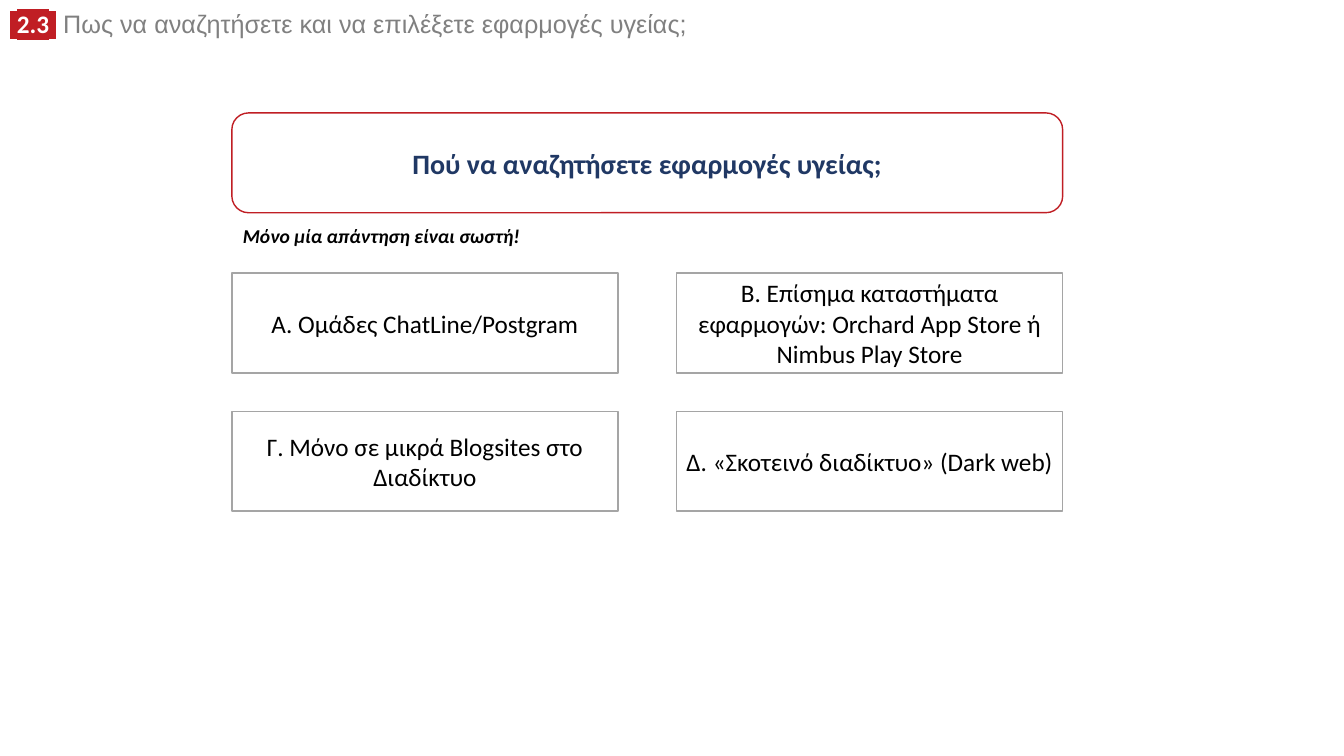
from lxml.etree import SubElement
from pptx import Presentation
from pptx.dml.color import RGBColor
from pptx.enum.shapes import MSO_SHAPE
from pptx.enum.text import MSO_ANCHOR, MSO_AUTO_SIZE, PP_ALIGN
from pptx.oxml.ns import qn
from pptx.util import Inches, Pt

WHITE = RGBColor(0xFF, 0xFF, 0xFF)
BLACK = RGBColor(0x00, 0x00, 0x00)
RED = RGBColor(0xC0, 0x1E, 0x24)
NAVY = RGBColor(0x20, 0x38, 0x64)
GRAY = RGBColor(0x80, 0x80, 0x80)
BORDER = RGBColor(0xA5, 0xA5, 0xA5)

LEFT, BOX_HEIGHT = 2.3, 0.99
ANSWER_WIDTH, ANSWER_TOP = 3.83, 2.71
COLUMN_STEP, ROW_STEP = 4.41, 1.37
ANSWERS = [
    "A. Ομάδες ChatLine/Postgram",
    "B. Επίσημα καταστήματα εφαρμογών: Orchard App Store ή Nimbus Play Store",
    "Γ. Μόνο σε μικρά Blogsites στο Διαδίκτυο",
    "Δ. «Σκοτεινό διαδίκτυο» (Dark web)",
]


def add_text(paragraph, text, size=18, font="Calibri", color=BLACK,
             bold=False, italic=False, highlight=None):
    """Append a formatted run to a paragraph."""
    run = paragraph.add_run()
    run.text = text
    run.font.size = Pt(size)
    run.font.bold = bold
    run.font.italic = italic
    run.font.color.rgb = color
    run.font.name = font
    if highlight is not None:
        properties = run.font._element
        marker = SubElement(properties, qn("a:highlight"))
        SubElement(marker, qn("a:srgbClr"), val=str(highlight))
        properties.find(qn("a:solidFill")).addnext(marker)


def add_label(slide, left, top, width, height, wrap=True):
    """Add a text box and return its first paragraph."""
    label = slide.shapes.add_textbox(
        Inches(left), Inches(top), Inches(width), Inches(height))
    label.text_frame.word_wrap = wrap
    label.text_frame.auto_size = MSO_AUTO_SIZE.SHAPE_TO_FIT_TEXT
    return label.text_frame.paragraphs[0]


def add_box(slide, outline, left, top, width, border, text, **text_format):
    """Add a white outlined box with centred text."""
    box = slide.shapes.add_shape(
        outline, Inches(left), Inches(top), Inches(width), Inches(BOX_HEIGHT))
    box.shadow.inherit = False
    box.fill.solid()
    box.fill.fore_color.rgb = WHITE
    box.line.color.rgb = border
    box.line.width = Pt(1)
    box.text_frame.word_wrap = True
    box.text_frame.vertical_anchor = MSO_ANCHOR.MIDDLE
    paragraph = box.text_frame.paragraphs[0]
    paragraph.alignment = PP_ALIGN.CENTER
    add_text(paragraph, text, **text_format)


def add_heading(slide):
    """Add the section number and title."""
    heading = add_label(slide, 0, 0.09, 9.52, 0.35)
    heading.line_spacing = 0.8
    for text, font in ((" ", "Arial"), ("2.3", "Calibri"), (" ", "Arial")):
        add_text(heading, text, font=font, color=WHITE, bold=True, highlight=RED)
    add_text(heading, " Πως να αναζητήσετε και να επιλέξετε εφαρμογές υγείας;",
             font="Arial", color=GRAY)


def main():
    """Build the quiz slide and save it."""
    presentation = Presentation()
    presentation.slide_width = Inches(13.33)
    presentation.slide_height = Inches(7.5)
    slide = presentation.slides.add_slide(presentation.slide_layouts[6])

    add_heading(slide)
    add_box(slide, MSO_SHAPE.ROUNDED_RECTANGLE, LEFT, 1.12,
            COLUMN_STEP + ANSWER_WIDTH, RED,
            "Πού να αναζητήσετε εφαρμογές υγείας;",
            size=20, color=NAVY, bold=True)
    for index, answer in enumerate(ANSWERS):
        row, column = divmod(index, 2)
        add_box(slide, MSO_SHAPE.RECTANGLE, LEFT + column * COLUMN_STEP,
                ANSWER_TOP + row * ROW_STEP, ANSWER_WIDTH, BORDER, answer)
    hint = add_label(slide, 2.31, 2.17, 2.97, 0.34, wrap=False)
    add_text(hint, "Μόνο μία απάντηση είναι σωστή!", size=14, bold=True, italic=True)

    presentation.save("out.pptx")


if __name__ == "__main__":
    main()
